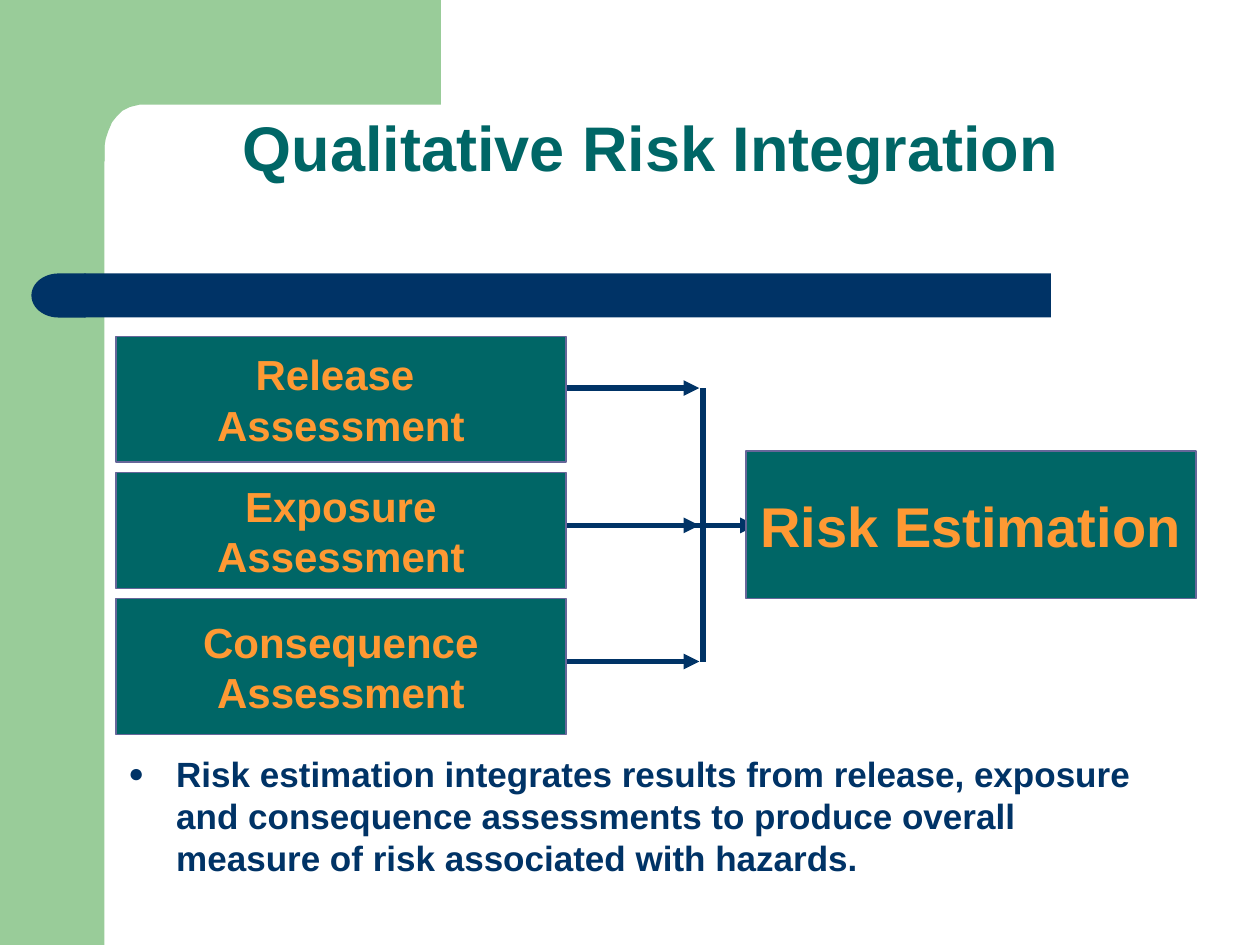
import pptx
import pptx.util
import pptx.dml.color
import pptx.enum.shapes
import pptx.enum.text
import pptx.oxml.ns
import lxml.etree

Inches, Pt = pptx.util.Inches, pptx.util.Pt
SHAPE = pptx.enum.shapes.MSO_SHAPE
ANCHOR = pptx.enum.text.MSO_ANCHOR
CENTER = pptx.enum.text.PP_ALIGN.CENTER

# Content
TITLE = "Qualitative Risk Integration"
SUMMARY = ("Risk estimation integrates results from release, exposure and consequence "
           "assessments to produce overall measure of risk associated with hazards.")
# lines, top, height, arrow height on the slide
ASSESSMENTS = [
    (["Release ", "Assessment"], 2.67, 1, 3.08),
    (["Exposure", "Assessment"], 3.75, 0.92, 4.17),
    (["Consequence", "Assessment"], 4.75, 1.08, 5.25),
]
ESTIMATION = (["Risk Estimation"], 3.58, 1.17)

THEME = {
    "font": "Arial", "green": "99CC99", "navy": "003366", "teal": "006666",
    "orange": "FF9933", "edge": "666699",
    "title": 36, "summary": 20, "assessment": 24, "estimation": 32,
}
BOX_LEFT, ESTIMATION_LEFT, BOX_WIDTH = 0.92, 5.92, 3.57
ARROW_START, ARROW_END, BUS = 4.5, 5.55, 5.58

deck = pptx.Presentation()
deck.slide_width, deck.slide_height = Inches(10), Inches(7.5)
slide = deck.slides.add_slide(deck.slide_layouts[6])


def color(name):
    return pptx.dml.color.RGBColor.from_string(THEME[name])


def apply(target, **values):
    for name, value in values.items():
        setattr(target, name, value)


def paint(shape, fill, edge=None):
    shape.shadow.inherit = False
    shape.fill.solid()
    shape.fill.fore_color.rgb = color(fill)
    if edge:
        shape.line.color.rgb = color(edge)
        shape.line.width = Pt(1)
    else:
        shape.line.fill.background()
    return shape


def block(kind, left, top, width, height, fill, edge=None):
    shape = slide.shapes.add_shape(
        kind, Inches(left), Inches(top), Inches(width), Inches(height))
    return paint(shape, fill, edge)


def write(frame, lines, size, ink, **paragraph_format):
    for index, line in enumerate(lines):
        paragraph = frame.paragraphs[0] if index == 0 else frame.add_paragraph()
        apply(paragraph, **paragraph_format)
        run = paragraph.add_run()
        run.text = line
        apply(run.font, name=THEME["font"], size=Pt(THEME[size]), bold=True)
        run.font.color.rgb = color(ink)


def text_box(left, top, width, height, **frame_format):
    frame = slide.shapes.add_textbox(
        Inches(left), Inches(top), Inches(width), Inches(height)).text_frame
    apply(frame, word_wrap=True, vertical_anchor=ANCHOR.TOP, **frame_format)
    return frame


def process_box(left, lines, top, height, size):
    frame = block(SHAPE.RECTANGLE, left, top, BOX_WIDTH, height, "teal", "edge").text_frame
    apply(frame, word_wrap=False, vertical_anchor=ANCHOR.MIDDLE)
    write(frame, lines, size, "orange", alignment=CENTER)


def add_xml(parent, tag, **attributes):
    child = lxml.etree.SubElement(parent, pptx.oxml.ns.qn(tag))
    for name, value in attributes.items():
        child.set(name, value)
    return child


def flow_line(x1, y1, x2, y2, arrow=True):
    line = slide.shapes.add_connector(
        pptx.enum.shapes.MSO_CONNECTOR.STRAIGHT,
        Inches(x1), Inches(y1), Inches(x2), Inches(y2))
    line.line.color.rgb = color("navy")
    line.line.width = Pt(3)
    if arrow:
        add_xml(line.line._get_or_add_ln(), "a:tailEnd", type="triangle")
    add_xml(line._element.spPr, "a:effectLst")


# Green side band and top corner with its rounded inner edge
block(SHAPE.RECTANGLE, 0, 0, 0.83, 7.5, "green")
CORNER = [(3.5, 0), (3.5, 0.83), (1.11, 0.83), (1.03, 0.85), (0.97, 0.88), (0.93, 0.92),
          (0.89, 0.97), (0.86, 1.04), (0.84, 1.1), (0.83, 1.16), (0.83, 1.28),
          (0.5, 1.28), (0.5, 0)]
outline = slide.shapes.build_freeform(*map(Inches, CORNER[0]), scale=1.0)
outline.add_line_segments([(Inches(x), Inches(y)) for x, y in CORNER[1:]], close=True)
paint(outline.convert_to_shape(), "green")

# Navy bar with a rounded left end
block(SHAPE.RECTANGLE, 0.67, 2.17, 7.67, 0.35, "navy")
cap = block(SHAPE.FLOWCHART_DELAY, 0.25, 2.17, 0.43, 0.35, "navy")
cap._element.spPr.xfrm.set("flipH", "1")

# Title
title = text_box(0.83, 0.83, 8.67, 1.25, margin_top=Inches(0.1))
write(title, [TITLE], "title", "teal", alignment=CENTER, line_spacing=0.9)

# Assessments and their arrows
for lines, top, height, arrow_y in ASSESSMENTS:
    process_box(BOX_LEFT, lines, top, height, "assessment")
    flow_line(ARROW_START, arrow_y, ARROW_END, arrow_y)

# Collecting line into the risk estimation
first_y, middle_y, last_y = [row[3] for row in ASSESSMENTS]
flow_line(BUS, first_y, BUS, last_y, arrow=False)
flow_line(5.5, middle_y, 6, middle_y)
process_box(ESTIMATION_LEFT, *ESTIMATION, "estimation")

# Summary bullet
summary = text_box(0.92, 5.92, 8.41, 1.58)
write(summary, [SUMMARY], "summary", "navy", space_before=Pt(4))
bullet = summary.paragraphs[0]._p.get_or_add_pPr()
apply_indent = {"marL": Inches(0.38), "indent": -Inches(0.38)}
for name, value in apply_indent.items():
    bullet.set(name, str(int(value)))
add_xml(add_xml(bullet, "a:buClr"), "a:srgbClr", val=THEME["navy"])
add_xml(bullet, "a:buSzPct", val="75000")
add_xml(bullet, "a:buFont", typeface=THEME["font"])
add_xml(bullet, "a:buChar", char="●")

deck.save("out.pptx")
